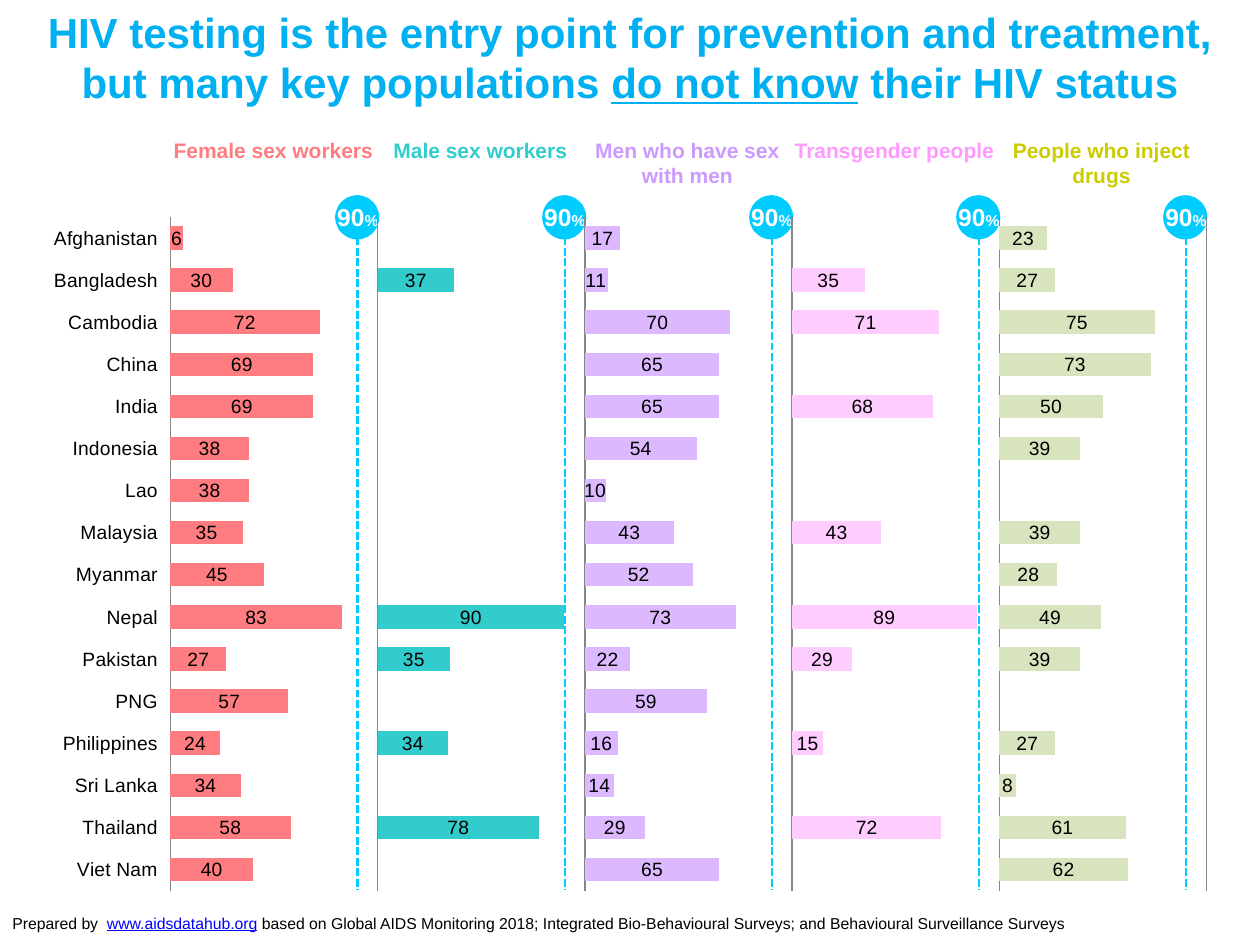
"""Build a slide of HIV testing rates in five key populations, by country."""
from dataclasses import dataclass
from typing import Optional

from lxml.etree import SubElement
from pptx import Presentation
from pptx.chart.data import CategoryChartData
from pptx.dml.color import RGBColor
from pptx.enum.chart import XL_CHART_TYPE, XL_TICK_LABEL_POSITION, XL_TICK_MARK
from pptx.enum.dml import MSO_LINE
from pptx.enum.shapes import MSO_CONNECTOR, MSO_SHAPE
from pptx.enum.text import MSO_ANCHOR, MSO_AUTO_SIZE, PP_ALIGN
from pptx.oxml import parse_xml
from pptx.oxml.ns import nsdecls, qn
from pptx.util import Emu, Inches, Pt


@dataclass(frozen=True)
class Theme:
    font: str = "Arial"
    title: str = "00B0F0"
    goal: str = "00CCFF"
    text: str = "000000"
    white: str = "FFFFFF"
    link: str = "0000FF"
    axis: str = "868686"
    big: int = 24
    mark: int = 14
    head: int = 12
    label: int = 11
    small: int = 9


@dataclass(frozen=True)
class Run:
    text: str
    size: int
    color: str
    bold: bool = False
    under: bool = False


@dataclass(frozen=True)
class Panel:
    head: tuple[str, ...]
    tint: str
    fill: str
    rates: tuple[Optional[int], ...]


@dataclass(frozen=True)
class Box:
    col: float
    row: float
    cols: float
    rows: float

    def place(self) -> tuple[Emu, Emu, Emu, Emu]:
        return across(self.col), down(self.row), across(self.cols), down(self.rows)


THEME = Theme()
WIDTH, HEIGHT = Inches(10), Inches(7.5)
COLS, ROWS = 100, 75
FIRST, PITCH = 28.4, 16.43
TOP, END = 15.5, 70.6
NO = None
LANDS = ("Afghanistan", "Bangladesh", "Cambodia", "China", "India", "Indonesia",
         "Lao", "Malaysia", "Myanmar", "Nepal", "Pakistan", "PNG",
         "Philippines", "Sri Lanka", "Thailand", "Viet Nam")
PANELS = (
    Panel(("Female sex workers",), "FF7C80", "FF7C80",
          (6, 30, 72, 69, 69, 38, 38, 35, 45, 83, 27, 57, 24, 34, 58, 40)),
    Panel(("Male sex workers",), "33CCCC", "33CCCC",
          (NO, 37, NO, NO, NO, NO, NO, NO, NO, 90, 35, NO, 34, NO, 78, NO)),
    Panel(("Men who have sex", "with men"), "CC99FF", "DCB9FF",
          (17, 11, 70, 65, 65, 54, 10, 43, 52, 73, 22, 59, 16, 14, 29, 65)),
    Panel(("Transgender people",), "FF99FF", "FFCCFF",
          (NO, 35, 71, NO, 68, NO, NO, 43, NO, 89, 29, NO, 15, NO, 72, NO)),
    Panel(("People who inject", "drugs"), "CCCC00", "D7E4BE",
          (23, 27, 75, 73, 50, 39, NO, 39, 28, 49, 39, NO, 27, 8, 61, 62)),
)


def across(cols: float) -> Emu:
    """Turn grid columns into a length."""
    return Emu(int(WIDTH * cols / COLS))


def down(rows: float) -> Emu:
    """Turn grid rows into a length."""
    return Emu(int(HEIGHT * rows / ROWS))


def tone(code: str) -> RGBColor:
    """Turn a hex code into a colour."""
    return RGBColor.from_string(code)


def write(frame, lines: list[list[Run]], align: PP_ALIGN) -> None:
    """Write each line of runs as a paragraph."""
    for num, line in enumerate(lines):
        para = frame.add_paragraph() if num else frame.paragraphs[0]
        para.alignment = align
        for item in line:
            run = para.add_run()
            run.text = item.text
            font = run.font
            font.name, font.size = THEME.font, Pt(item.size)
            font.bold, font.underline = item.bold, item.under
            font.color.rgb = tone(item.color)


def add_text(slide, box: Box, lines: list[list[Run]], wrap: bool = False,
             align: PP_ALIGN = PP_ALIGN.CENTER,
             anchor: MSO_ANCHOR = MSO_ANCHOR.TOP) -> None:
    """Add a text box."""
    frame = slide.shapes.add_textbox(*box.place()).text_frame
    frame.word_wrap, frame.vertical_anchor = wrap, anchor
    write(frame, lines, align)


def add_title(slide) -> None:
    """Move and fill the title placeholder."""
    title = slide.shapes.title
    title.left, title.top, title.width, title.height = Box(0, 0, 100, 16.2).place()
    frame = title.text_frame
    frame.word_wrap, frame.auto_size = True, MSO_AUTO_SIZE.NONE
    frame.vertical_anchor = MSO_ANCHOR.TOP
    parts = (("HIV testing is the entry point for prevention and treatment, "
              "but many key populations ", False),
             ("do not know", True), (" their HIV status", False))
    write(frame, [[Run(text, THEME.big, THEME.title, True, under)
                   for text, under in parts]], PP_ALIGN.CENTER)


def add_goal(slide, mid: float) -> None:
    """Add the dashed goal line with its round mark."""
    line = slide.shapes.add_connector(MSO_CONNECTOR.STRAIGHT, across(mid), down(TOP),
                                      across(mid), down(END))
    line.line.color.rgb, line.line.width = tone(THEME.goal), Pt(1.5)
    line.line.dash_style = MSO_LINE.SQUARE_DOT
    SubElement(line.element.spPr, qn("a:effectLst"))
    disc = slide.shapes.add_shape(MSO_SHAPE.OVAL, *Box(mid - 1.8, TOP, 3.5, 3.5).place())
    disc.shadow.inherit = False
    disc.fill.solid()
    disc.fill.fore_color.rgb = tone(THEME.goal)
    disc.line.fill.background()
    add_text(slide, Box(mid - 2.7, TOP, 5.4, 3.4),
             [[Run("90", THEME.mark, THEME.white, True),
               Run("%", THEME.small, THEME.white, True)]], anchor=MSO_ANCHOR.MIDDLE)


def add_panel(slide, num: int, panel: Panel) -> None:
    """Add the heading and goal of one panel."""
    mid = FIRST + PITCH * num
    lines = [[Run(text, THEME.head, panel.tint, True)] for text in panel.head]
    add_text(slide, Box(mid - 15.7, 10.4, 18, 1 + 2 * len(lines)), lines)
    add_goal(slide, mid)


def clear_back(chart) -> None:
    """Fix the plot's place and make the chart see-through."""
    root = chart.element
    area = root.find(".//" + qn("c:plotArea"))
    for old in area.findall(qn("c:layout")):
        area.remove(old)
    spots = "".join(f'<c:{key} val="{val}"/>' for key, val in (
        ("layoutTarget", "inner"), ("xMode", "edge"), ("yMode", "edge"),
        ("x", 0.127), ("y", 0.095), ("w", 0.841), ("h", 0.804)))
    area.insert(0, parse_xml(f'<c:layout {nsdecls("c")}><c:manualLayout>{spots}'
                             "</c:manualLayout></c:layout>"))
    blank = (f'<c:spPr {nsdecls("c", "a")}><a:noFill/>'
             "<a:ln><a:noFill/></a:ln></c:spPr>")
    area.append(parse_xml(blank))
    root.find(qn("c:chart")).addnext(parse_xml(blank))


def add_bars(slide) -> None:
    """Add the bars, each panel padded to a full hundred."""
    data = CategoryChartData(number_format="0")
    data.categories = LANDS
    for num, panel in enumerate(PANELS):
        data.add_series(f"Series {2 * num + 1}", panel.rates)
        data.add_series(f"Series {2 * num + 2}", [100 - (rate or 0) for rate in panel.rates])
    chart = slide.shapes.add_chart(XL_CHART_TYPE.BAR_STACKED_100,
                                   *Box(1.1, 10.9, 97.8, 66.5).place(), data).chart
    chart.has_legend = chart.has_title = False
    chart.font.name, chart.font.size = THEME.font, Pt(THEME.label)
    chart.font.color.rgb = tone(THEME.text)
    plot = chart.plots[0]
    plot.gap_width, plot.overlap, plot.vary_by_categories = 80, 100, False
    for num, bars in enumerate(plot.series):
        if num % 2:
            bars.format.fill.background()
            continue
        bars.format.fill.solid()
        bars.format.fill.fore_color.rgb = tone(PANELS[num // 2].fill)
        tags = bars.data_labels
        tags.show_value, tags.number_format = True, "0"
        tags.number_format_is_linked = False
    names, scale = chart.category_axis, chart.value_axis
    names.reverse_order = True
    names.major_tick_mark = names.minor_tick_mark = XL_TICK_MARK.NONE
    names.tick_label_position = XL_TICK_LABEL_POSITION.LOW
    scale.minimum_scale, scale.maximum_scale, scale.major_unit = 0, 1, 0.2
    scale.has_major_gridlines, scale.visible = True, False
    for part in (names, scale.major_gridlines):
        part.format.line.color.rgb = tone(THEME.axis)
        part.format.line.width = Pt(0.75)
    clear_back(chart)


def main() -> None:
    """Build and save the slide."""
    deck = Presentation()
    deck.slide_width, deck.slide_height = WIDTH, HEIGHT
    slide = deck.slides.add_slide(deck.slide_layouts[5])
    add_title(slide)
    for num, panel in enumerate(PANELS):
        add_panel(slide, num, panel)
    add_text(slide, Box(0, 72, 93.3, 2.5), [[
        Run("Prepared by  ", THEME.small, THEME.text),
        Run("www.aidsdatahub.org", THEME.small, THEME.link, under=True),
        Run(" based on Global AIDS Monitoring 2018; Integrated Bio-Behavioural Surveys; "
            "and Behavioural Surveillance Surveys", THEME.small, THEME.text),
    ]], wrap=True, align=PP_ALIGN.LEFT)
    add_bars(slide)
    deck.save("out.pptx")


if __name__ == "__main__":
    main()
